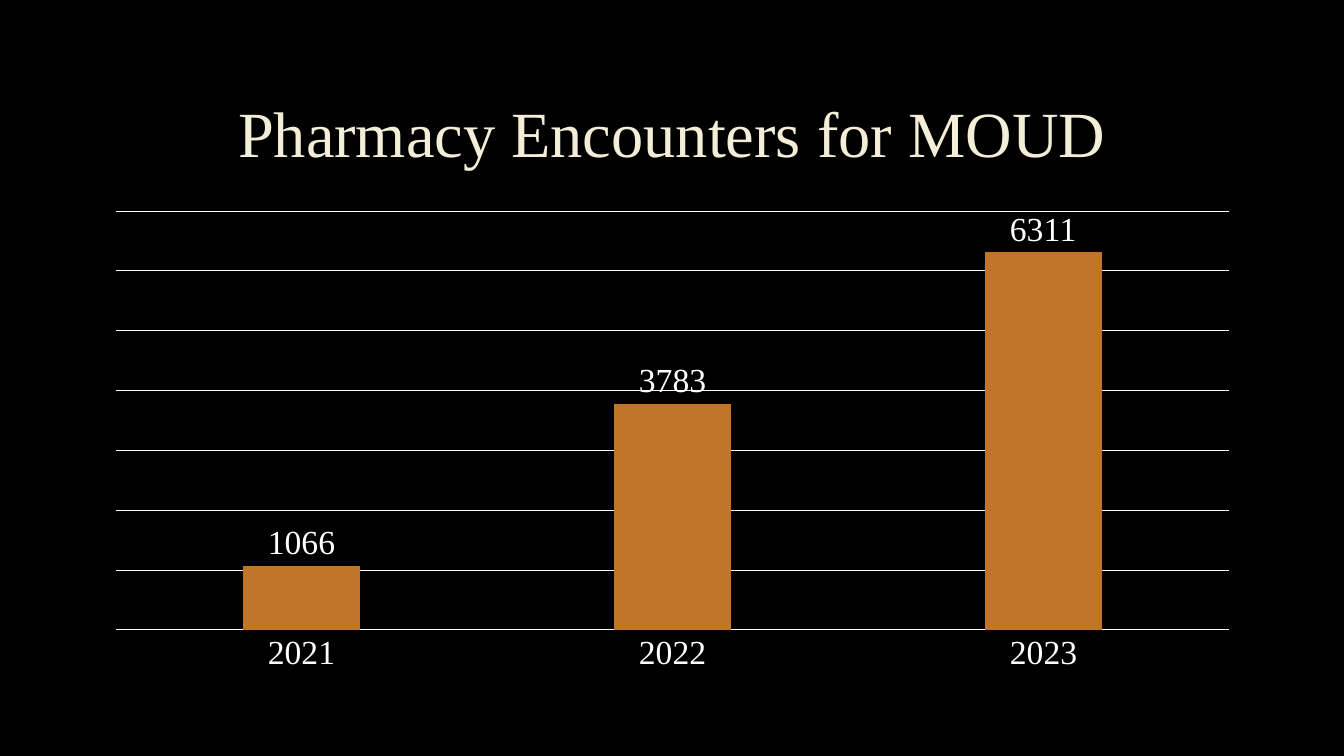
from pptx import Presentation
from pptx.chart.data import CategoryChartData
from pptx.dml.color import RGBColor
from pptx.enum.chart import XL_CHART_TYPE, XL_LABEL_POSITION, XL_TICK_MARK
from pptx.enum.text import MSO_ANCHOR, PP_ALIGN
from pptx.util import Inches, Pt

COLUMNS = XL_CHART_TYPE.COLUMN_CLUSTERED
ABOVE_BAR = XL_LABEL_POSITION.OUTSIDE_END
NO_TICK = XL_TICK_MARK.NONE
MIDDLE = MSO_ANCHOR.MIDDLE
CENTER = PP_ALIGN.CENTER

# Content
TITLE = "Pharmacy Encounters for MOUD"
SERIES = "Series 1"
ENCOUNTERS = {"2021": 1066, "2022": 3783, "2023": 6311}

# Style
FONT = "Times New Roman"
BLACK = RGBColor(0x00, 0x00, 0x00)
WHITE = RGBColor(0xFF, 0xFF, 0xFF)
CREAM = RGBColor(0xF4, 0xED, 0xD8)
ORANGE = RGBColor(0xC1, 0x75, 0x29)


def set_font(font, size, color):
    font.name = FONT
    font.size = Pt(size)
    font.color.rgb = color


def set_line(line):
    line.color.rgb = WHITE
    line.width = Pt(0.75)


prs = Presentation()
prs.slide_width, prs.slide_height = Inches(13.33), Inches(7.5)
slide = prs.slides.add_slide(prs.slide_layouts[6])
slide.background.fill.solid()
slide.background.fill.fore_color.rgb = BLACK

# Title
title = slide.shapes.add_textbox(Inches(1), Inches(0.67), Inches(11.32), Inches(1.38))
title_frame = title.text_frame
title_frame.word_wrap = True
title_frame.vertical_anchor = MIDDLE
heading = title_frame.paragraphs[0]
heading.text = TITLE
heading.alignment = CENTER
heading.line_spacing = 0.9
set_font(heading.font, 46, CREAM)

# Encounters per year
data = CategoryChartData()
data.categories = list(ENCOUNTERS)
data.add_series(SERIES, list(ENCOUNTERS.values()))
chart = slide.shapes.add_chart(
    COLUMNS, Inches(0.92), Inches(2), Inches(11.5), Inches(4.76), data).chart
chart.has_title = False
chart.has_legend = False
set_font(chart.font, 10, WHITE)

# Axes
years = chart.category_axis
years.major_tick_mark = years.minor_tick_mark = NO_TICK
set_font(years.tick_labels.font, 24, WHITE)
set_line(years.format.line)
counts = chart.value_axis
counts.visible = False
counts.has_major_gridlines = True
set_line(counts.major_gridlines.format.line)

# Bars and their values
plot = chart.plots[0]
plot.gap_width = 219
plot.overlap = -27
plot.vary_by_categories = False
bars = plot.series[0]
bars.format.fill.solid()
bars.format.fill.fore_color.rgb = ORANGE
labels = bars.data_labels
labels.show_value = True
labels.position = ABOVE_BAR
set_font(labels.font, 24, WHITE)

prs.save("out.pptx")
